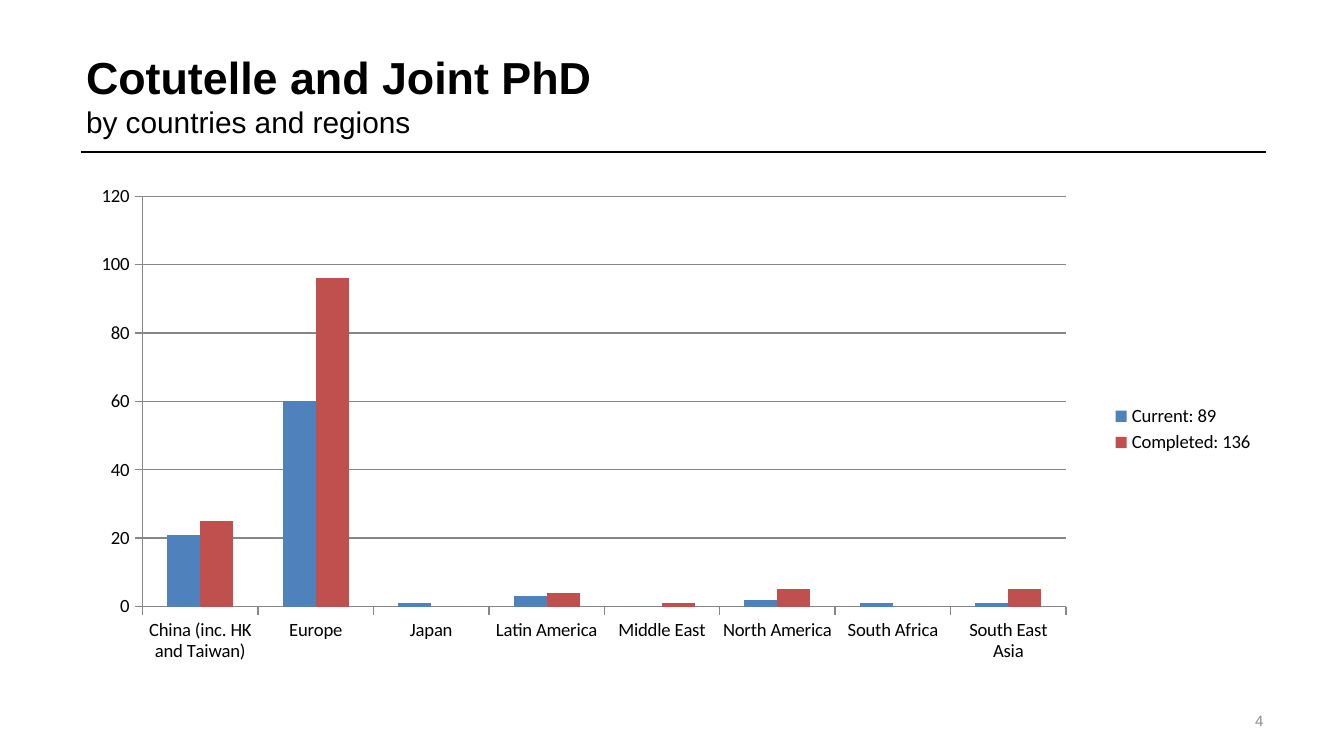
from typing import NamedTuple

from lxml import etree
from pptx import Presentation
from pptx.chart.data import CategoryChartData
from pptx.dml.color import RGBColor
from pptx.enum.chart import XL_CHART_TYPE, XL_LEGEND_POSITION, XL_TICK_MARK
from pptx.enum.shapes import MSO_CONNECTOR
from pptx.enum.text import MSO_ANCHOR, MSO_AUTO_SIZE, PP_ALIGN
from pptx.oxml.ns import qn
from pptx.util import Inches, Pt

COLUMNS = XL_CHART_TYPE.COLUMN_CLUSTERED
LEGEND_RIGHT = XL_LEGEND_POSITION.RIGHT
TICK_OUTSIDE = XL_TICK_MARK.OUTSIDE
STRAIGHT = MSO_CONNECTOR.STRAIGHT
ANCHOR_BOTTOM = MSO_ANCHOR.BOTTOM
ANCHOR_MIDDLE = MSO_ANCHOR.MIDDLE
NO_AUTOFIT = MSO_AUTO_SIZE.NONE
ALIGN_LEFT = PP_ALIGN.LEFT
ALIGN_RIGHT = PP_ALIGN.RIGHT
TITLE_ONLY = 5
SLIDE_WIDTH = 10
SLIDE_HEIGHT = SLIDE_WIDTH * 9 / 16
BLACK = "000000"
AXIS_GRAY = "868686"
NUMBER_GRAY = "8C8C8C"


class Status(NamedTuple):
    name: str
    counts: tuple[int, ...]
    color: str


REGIONS = (
    "China (inc. HK and Taiwan)", "Europe", "Japan", "Latin America",
    "Middle East", "North America", "South Africa", "South East Asia",
)
STATUSES = (
    Status("Current: 89", (21, 60, 1, 3, 0, 2, 1, 1), "4F81BD"),
    Status("Completed: 136", (25, 96, 0, 4, 1, 5, 0, 5), "C0504D"),
)
PLOT_AREA = {"x": 0.05, "y": 0.04, "w": 0.78, "h": 0.81}


def rgb(color: str) -> RGBColor:
    return RGBColor.from_string(color)


def style_font(font, name: str, size: float, color: str, bold: bool = False) -> None:
    font.name = name
    font.size = Pt(size)
    font.bold = bold
    font.color.rgb = rgb(color)


def style_line(line, color: str, width: float) -> None:
    line.color.rgb = rgb(color)
    line.width = Pt(width)


def add_heading(slide, heading: str, subheading: str) -> None:
    title = slide.shapes.title
    title.left, title.top = Inches(0.54), Inches(0.12)
    title.width, title.height = Inches(6.98), Inches(0.97)
    frame = title.text_frame
    frame.auto_size = NO_AUTOFIT
    frame.vertical_anchor = ANCHOR_BOTTOM
    frame.word_wrap = False
    paragraph = frame.paragraphs[0]
    paragraph.alignment = ALIGN_LEFT
    heading_run = paragraph.add_run()
    heading_run.text = heading
    style_font(heading_run.font, "Arial", 24, BLACK, bold=True)
    paragraph.add_line_break()
    subheading_run = paragraph.add_run()
    subheading_run.text = subheading
    style_font(subheading_run.font, "Arial", 16, BLACK)


def add_rule(slide) -> None:
    y = Inches(1.13)
    rule = slide.shapes.add_connector(STRAIGHT, Inches(0.6), y, Inches(9.42), y)
    style_line(rule.line, BLACK, 1)
    etree.SubElement(rule._element.spPr, qn("a:effectLst"))


def add_slide_number(slide, number: str) -> None:
    box = slide.shapes.add_textbox(Inches(7.17), Inches(5.21), Inches(2.33), Inches(0.3))
    frame = box.text_frame
    frame.word_wrap = True
    frame.vertical_anchor = ANCHOR_MIDDLE
    paragraph = frame.paragraphs[0]
    paragraph.text = number
    paragraph.alignment = ALIGN_RIGHT
    style_font(paragraph.font, "Arial", 8, NUMBER_GRAY)


def fix_plot_area(chart) -> None:
    """Pin the inner plot area to fractions of the chart's size."""
    plot_area = chart._chartSpace.chart.plotArea
    for automatic in plot_area.findall(qn("c:layout")):
        plot_area.remove(automatic)
    layout = etree.Element(qn("c:layout"))
    plot_area.insert(0, layout)
    manual = etree.SubElement(layout, qn("c:manualLayout"))
    settings = {"layoutTarget": "inner", "xMode": "edge", "yMode": "edge", **PLOT_AREA}
    for tag, value in settings.items():
        etree.SubElement(manual, qn(f"c:{tag}")).set("val", str(value))


def add_region_chart(slide) -> None:
    data = CategoryChartData()
    data.categories = REGIONS
    for status in STATUSES:
        data.add_series(status.name, status.counts)
    chart = slide.shapes.add_chart(
        COLUMNS, Inches(0.62), Inches(1.31), Inches(8.81), Inches(3.77), data
    ).chart
    style_font(chart.font, "Calibri", 10, BLACK)
    chart.has_title = False
    chart.has_legend = True
    chart.legend.position = LEGEND_RIGHT
    chart.legend.include_in_layout = False

    plot = chart.plots[0]
    plot.gap_width = 150
    plot.overlap = 0
    plot.vary_by_categories = False
    for series, status in zip(plot.series, STATUSES):
        series.format.fill.solid()
        series.format.fill.fore_color.rgb = rgb(status.color)
        series.invert_if_negative = False

    for axis in (chart.category_axis, chart.value_axis):
        axis.major_tick_mark = TICK_OUTSIDE
        style_line(axis.format.line, AXIS_GRAY, 0.75)
    counts = chart.value_axis
    counts.minimum_scale, counts.maximum_scale, counts.major_unit = 0, 120, 20
    counts.has_major_gridlines = True
    style_line(counts.major_gridlines.format.line, AXIS_GRAY, 0.75)
    fix_plot_area(chart)


def main() -> None:
    deck = Presentation()
    deck.slide_width, deck.slide_height = Inches(SLIDE_WIDTH), Inches(SLIDE_HEIGHT)
    slide = deck.slides.add_slide(deck.slide_layouts[TITLE_ONLY])
    add_rule(slide)
    add_heading(slide, "Cotutelle and Joint PhD", "by countries and regions")
    add_slide_number(slide, "4")
    add_region_chart(slide)
    deck.save("out.pptx")


if __name__ == "__main__":
    main()
